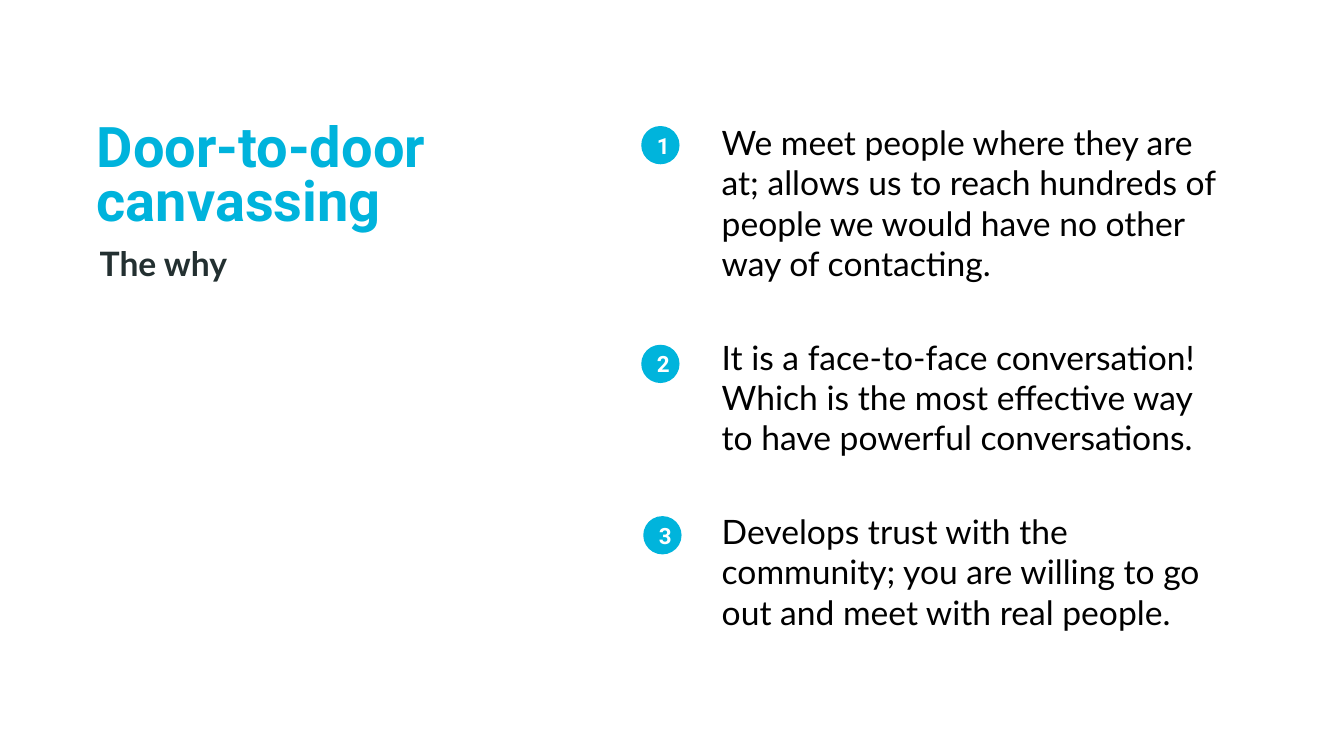
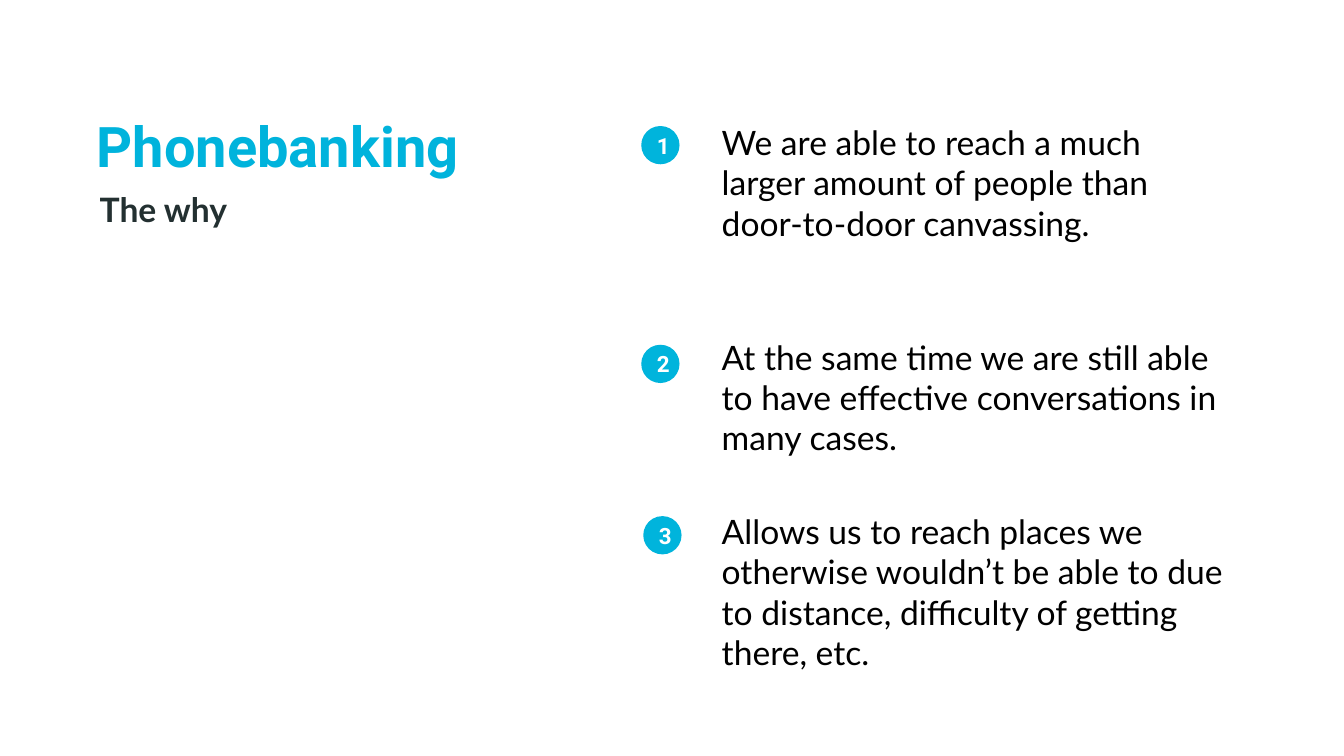
from pptx import Presentation
from pptx.dml.color import RGBColor
from pptx.enum.shapes import MSO_SHAPE as SHAPE
from pptx.enum.text import MSO_ANCHOR as ANCHOR, MSO_AUTO_SIZE as AUTO, PP_ALIGN as ALIGN
from pptx.util import Inches, Pt

# Content: title, title lines, subtitle, then (reason, lines) in order
SLIDES = [
    ("Door-to-door canvassing", 2, "The why", [
        ("We meet people where they are at; allows us to reach hundreds of "
         "people we would have no other way of contacting.", 4),
        ("It is a face-to-face conversation! Which is the most effective way "
         "to have powerful conversations.", 3),
        ("Develops trust with the community; you are willing to go out and "
         "meet with real people.", 3),
    ]),
    ("Phonebanking", 1, "The why", [
        ("We are able to reach a much larger amount of people than "
         "door-to-door canvassing.", 3),
        ("At the same time we are still able to have effective conversations "
         "in many cases.", 3),
        ("Allows us to reach places we otherwise wouldn’t be able to due to "
         "distance, difficulty of getting there, etc.", 4),
    ]),
]

# Shared style
TITLE_BLUE, BADGE_BLUE = "00B3DC", "00B4DC"
DARK, BLACK, WHITE = "233031", "000000", "FFFFFF"
HEAD_FONT, BODY_FONT = "Roboto", "Lato"

# Shared layout, in inches
LEFT, TITLE_TOP, TITLE_W = 0.89, 1.2, 3.96
TITLE_LINE, BODY_LINE = 0.535, 0.405
BODY_LEFT, BODY_W = 7.06, 5.19
BADGE = 0.38
ROWS = [  # badge left, badge top, text top
    (6.36, 1.25, 1.16),
    (6.36, 3.42, 3.29),
    (6.38, 5.12, 5.02),
]


def rgb(color):
    return RGBColor.from_string(color)


def write(tf, text, size, font, color, bold=False):
    p = tf.paragraphs[0]
    r = p.add_run()
    r.text = text
    r.font.size, r.font.name, r.font.bold = Pt(size), font, bold
    r.font.color.rgb = rgb(color)
    return p


def add_text(s, left, top, width, height):
    box = s.shapes.add_textbox(Inches(left), Inches(top), Inches(width), Inches(height))
    tf = box.text_frame
    tf.word_wrap = True
    tf.auto_size = AUTO.SHAPE_TO_FIT_TEXT
    return tf


def add_heading(s, title, lines, subtitle):
    height = 0.09 + TITLE_LINE * lines
    tf = add_text(s, LEFT, TITLE_TOP, TITLE_W, height)
    tf.margin_left = tf.margin_right = Inches(0.07)
    tf.margin_top = tf.margin_bottom = Inches(0.04)
    write(tf, title, 40, HEAD_FONT, TITLE_BLUE, bold=True).line_spacing = 0.8

    tf = add_text(s, LEFT, TITLE_TOP + height, 1.47, 0.5)
    write(tf, subtitle, 24, BODY_FONT, DARK, bold=True)


def add_badge(s, number, left, top):
    sp = s.shapes.add_shape(SHAPE.OVAL, Inches(left), Inches(top), Inches(BADGE), Inches(BADGE))
    sp.shadow.inherit = False
    sp.fill.solid()
    sp.fill.fore_color.rgb = rgb(BADGE_BLUE)
    sp.line.fill.background()
    sp.text_frame.vertical_anchor = ANCHOR.MIDDLE
    p = write(sp.text_frame, str(number), 16, HEAD_FONT, WHITE, bold=True)
    p.alignment = ALIGN.CENTER


def main():
    prs = Presentation()
    prs.slide_width, prs.slide_height = Inches(13.33), Inches(7.5)
    for title, title_lines, subtitle, reasons in SLIDES:
        s = prs.slides.add_slide(prs.slide_layouts[6])
        add_heading(s, title, title_lines, subtitle)
        # Numbered reasons
        for number, ((text, lines), row) in enumerate(zip(reasons, ROWS), 1):
            badge_left, badge_top, text_top = row
            add_badge(s, number, badge_left, badge_top)
            tf = add_text(s, BODY_LEFT, text_top, BODY_W, 0.1 + BODY_LINE * lines)
            write(tf, text, 24, BODY_FONT, BLACK)
    prs.save("out.pptx")


if __name__ == "__main__":
    main()
